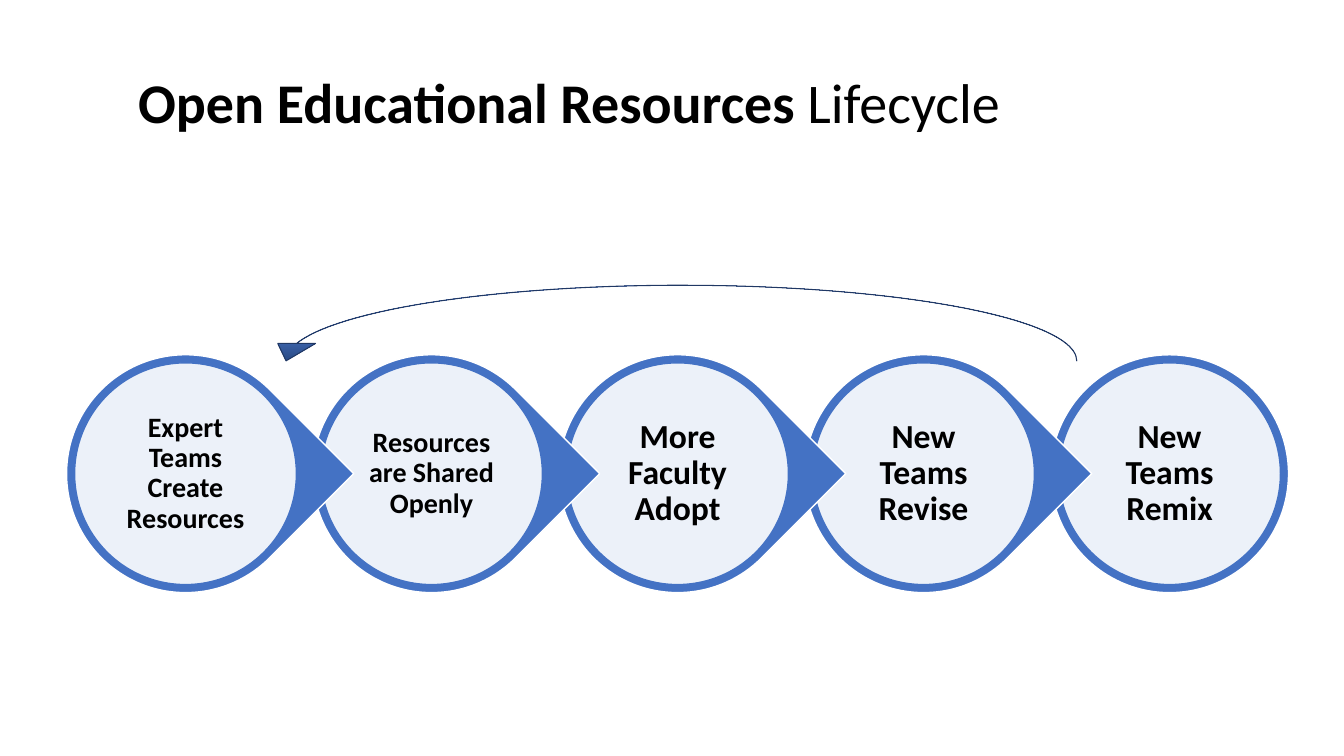
from dataclasses import dataclass
from typing import Any

from lxml import etree
from pptx import Presentation
from pptx import util as u
from pptx.dml.color import RGBColor
from pptx.enum import shapes, text
from pptx.oxml import parse_xml
from pptx.oxml.ns import nsdecls, qn


@dataclass(frozen=True)
class Theme:
    font: str = "Calibri"
    ink: str = "000000"
    paper: str = "FFFFFF"
    accent: str = "4472C4"
    arrow_line: str = "203864"
    arrow_stops: tuple = ((0, "2A4B86"), (48, "4A76C6"), (100, "8FAADC"))
    title_size: int = 40
    large: int = 24
    small: int = 20


@dataclass(frozen=True)
class Stage:
    label: str
    size: int


THEME = Theme()
STAGES = [
    Stage("Expert Teams Create Resources", THEME.small),
    Stage("Resources are Shared Openly", THEME.small),
    Stage("More Faculty Adopt", THEME.large),
    Stage("New Teams Revise", THEME.large),
    Stage("New Teams Remix", THEME.large),
]
LEFT, TOP, PITCH = 0.66, 3.52, 2.44
OUTER, RING, LABEL = 2.36, 0.08, 1.57


def apply(target: Any, values: dict[str, Any]) -> None:
    for name, value in values.items():
        setattr(target, name, value)


def box(x: float, y: float, w: float, h: float) -> list[int]:
    return [u.Inches(v) for v in (x, y, w, h)]


def add_run(p: Any, content: str, size: int, bold: bool) -> None:
    r = p.add_run()
    r.text = content
    apply(r.font, {"name": THEME.font, "size": u.Pt(size), "bold": bold})
    r.font.color.rgb = RGBColor.from_string(THEME.ink)


def add_outline(s: Any, kind: Any, area: list[int], line: str, width: float) -> Any:
    sp = s.shapes.add_shape(kind, *area)
    sp.shadow.inherit = False
    sp.line.color.rgb = RGBColor.from_string(line)
    sp.line.width = u.Pt(width)
    return sp


def add_filled(s: Any, kind: Any, area: list[int], fill: str, line: str) -> Any:
    sp = add_outline(s, kind, area, line, 1)
    sp.fill.solid()
    sp.fill.fore_color.rgb = RGBColor.from_string(fill)
    return sp


def add_title(s: Any) -> None:
    sp = s.shapes.title
    sp.left, sp.top, sp.width, sp.height = box(1.27, 0.7, 10.81, 0.98)
    tf = sp.text_frame
    apply(tf, {"word_wrap": True, "auto_size": text.MSO_AUTO_SIZE.NONE,
               "vertical_anchor": text.MSO_ANCHOR.TOP})
    p = tf.paragraphs[0]
    apply(p, {"alignment": text.PP_ALIGN.LEFT, "line_spacing": 0.9})
    add_run(p, "Open Educational Resources", THEME.title_size, True)
    add_run(p, " Lifecycle", THEME.title_size, False)


def add_stage(s: Any, stage: Stage, left: float, is_last: bool) -> None:
    kinds = shapes.MSO_SHAPE
    outer = add_filled(s, kinds.OVAL if is_last else kinds.TEAR,
                       box(left, TOP, OUTER, OUTER), THEME.accent, THEME.paper)
    if not is_last:
        outer.rotation = 45
        outer.adjustments[0] = 1

    inner_size = OUTER - 2 * RING
    inner = add_filled(s, kinds.OVAL, box(left + RING, TOP + RING, inner_size, inner_size),
                       THEME.paper, THEME.accent)
    color = inner.fill._xPr.find(qn("a:solidFill"))[0]
    etree.SubElement(color, qn("a:alpha"), val="90000")

    inset = (OUTER - LABEL) / 2
    tf = s.shapes.add_textbox(*box(left + inset, TOP + inset, LABEL, LABEL)).text_frame
    apply(tf, {"word_wrap": True, "vertical_anchor": text.MSO_ANCHOR.MIDDLE})
    apply(tf, {f"margin_{side}": u.Inches(0.03)
               for side in ("left", "top", "right", "bottom")})
    p = tf.paragraphs[0]
    apply(p, {"alignment": text.PP_ALIGN.CENTER, "line_spacing": 0.9})
    add_run(p, stage.label, stage.size, True)


def add_return_arrow(s: Any) -> None:
    sp = add_outline(s, shapes.MSO_SHAPE.CURVED_DOWN_ARROW, box(2.65, 2.83, 8.03, 0.75),
                     THEME.arrow_line, 0.75)
    for i, value in enumerate((0, 0.5, 0.23)):
        sp.adjustments[i] = value
    sp_pr = sp._element.spPr
    sp_pr.find(qn("a:xfrm")).set("flipH", "1")
    stops = "".join(f'<a:gs pos="{pos * 1000}"><a:srgbClr val="{color}"/></a:gs>'
                    for pos, color in THEME.arrow_stops)
    sp_pr.find(qn("a:prstGeom")).addnext(parse_xml(
        f'<a:gradFill {nsdecls("a")} rotWithShape="1"><a:gsLst>{stops}</a:gsLst>'
        '<a:lin ang="16200000" scaled="1"/></a:gradFill>'))


def main() -> None:
    prs = Presentation()
    apply(prs, {"slide_width": u.Inches(13.33), "slide_height": u.Inches(7.5)})
    s = prs.slides.add_slide(prs.slide_layouts[5])
    add_title(s)
    last = len(STAGES) - 1
    for i in range(last, -1, -1):
        add_stage(s, STAGES[i], LEFT + i * PITCH, i == last)
    add_return_arrow(s)
    prs.save("out.pptx")


if __name__ == "__main__":
    main()
